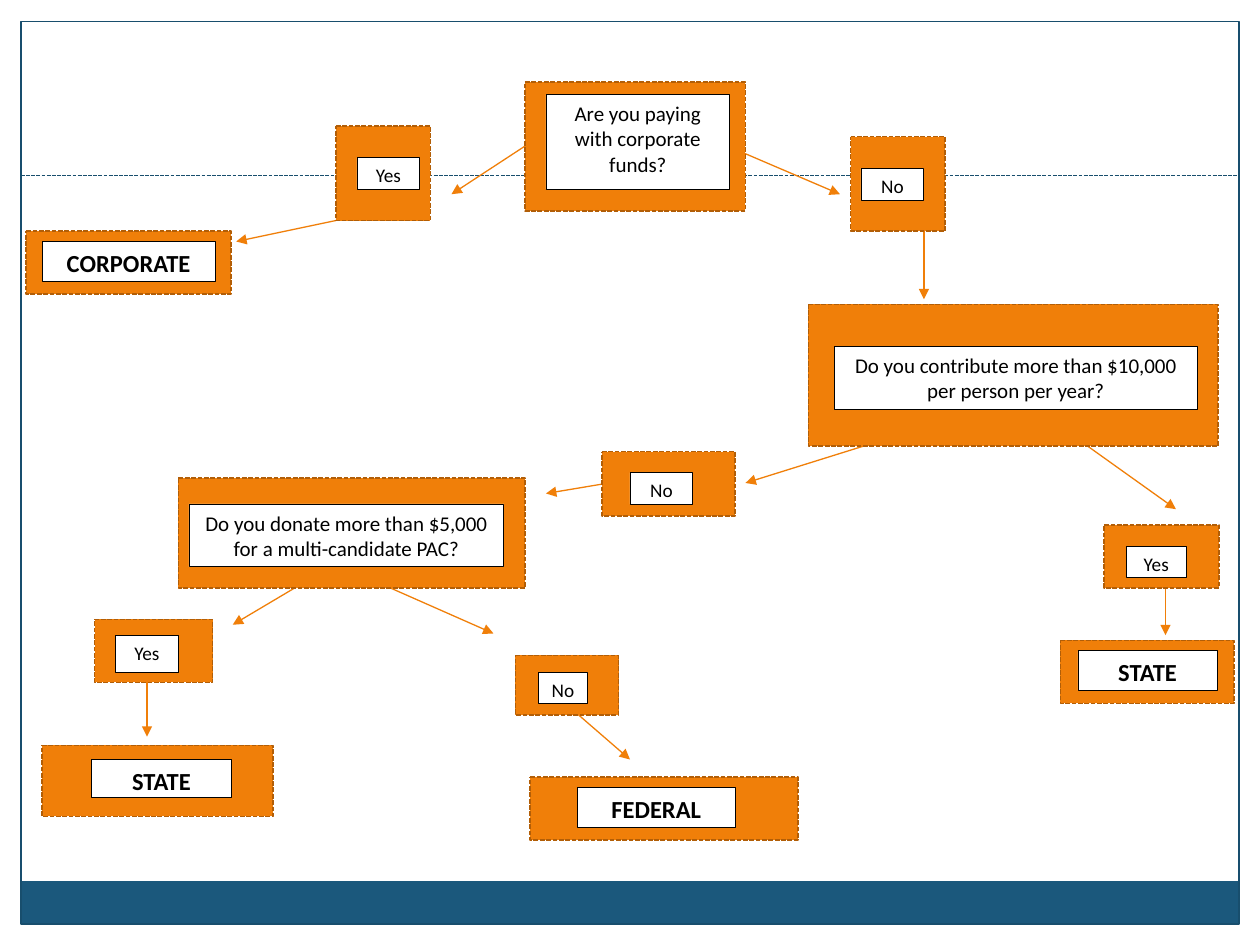
from lxml.etree import SubElement
from pptx import Presentation
from pptx.dml.color import RGBColor
from pptx.enum.dml import MSO_LINE
from pptx.enum.shapes import MSO_CONNECTOR, MSO_SHAPE
from pptx.enum.text import MSO_ANCHOR, PP_ALIGN
from pptx.oxml.ns import qn
from pptx.util import Pt

FONT = "Calibri"
ORANGE, BROWN = "F07F09", "B25E07"
NAVY, BLUE = "184E6D", "1B587C"
WHITE, BLACK = "FFFFFF", "000000"

# Text styles: size in points, bold
QUESTION, ANSWER, RESULT = (12, False), (11, False), (14, True)

# Text, style, outer box, inner label (left, top, width, height)
NODES = [
    ("Are you paying with corporate funds?", QUESTION,
     (300, 47, 126, 73.5), (312, 54, 105, 54)),
    ("Yes", ANSWER, (192, 72, 54, 54), (204, 90, 36, 18)),
    ("No", ANSWER, (486, 78, 54, 54), (492, 96, 36, 18.5)),
    ("CORPORATE", RESULT, (15, 132, 117, 36), (24, 138, 99, 23)),
    ("Do you contribute more than $10,000 per person per year?", QUESTION,
     (462, 174, 234, 81), (477, 198, 207, 36)),
    ("Yes", ANSWER, (631, 300, 65.5, 36), (643.5, 312, 34.5, 18)),
    ("STATE", RESULT, (606, 366, 99, 36), (616, 372, 79.5, 22.5)),
    ("No", ANSWER, (344, 258, 76, 37), (360, 270, 36, 18)),
    ("Do you donate more than $5,000 for a multi-candidate PAC?", QUESTION,
     (102, 273, 198, 63), (108, 288, 180, 36)),
    ("No", ANSWER, (294.5, 374.5, 59, 34), (307.5, 384, 28.5, 18)),
    ("Yes", ANSWER, (54, 354, 67.5, 36), (66, 363, 36, 21)),
    ("STATE", RESULT, (24, 426, 132, 40.5), (52.5, 434, 79.5, 21.5)),
    ("FEDERAL", RESULT, (303, 444, 153, 36), (330, 450, 90, 23)),
]

# Start x, start y, end x, end y
ARROWS = [
    (300, 83.5, 258, 111), (417, 84, 480, 111),
    (192, 126, 135, 138), (528, 126, 528, 171),
    (609, 246, 672, 291), (522, 246, 426, 276),
    (666, 336, 666, 363), (348, 276, 312, 282),
    (178.5, 330, 133, 357), (209.5, 330, 282, 362),
    (84, 390, 84, 421), (330, 408, 360, 434),
]


def color(value):
    return RGBColor.from_string(value)


def style_line(line, value, width, dash=None):
    line.color.rgb = color(value)
    line.width = Pt(width)
    if dash:
        line.dash_style = dash


def add_box(page, place, fill=None, line=None, kind=MSO_SHAPE.RECTANGLE):
    box = page.shapes.add_shape(kind, *map(Pt, place))
    box.shadow.inherit = False
    if fill:
        box.fill.solid()
        box.fill.fore_color.rgb = color(fill)
    else:
        box.fill.background()
    if line:
        style_line(box.line, *line)
    else:
        box.line.fill.background()
    return box


def add_line(page, ends, value, dash=None, arrow=False):
    link = page.shapes.add_connector(MSO_CONNECTOR.STRAIGHT, *map(Pt, ends))
    style_line(link.line, value, 0.75, dash)
    if arrow:
        SubElement(link.line._get_or_add_ln(), qn("a:tailEnd"), type="triangle")
    SubElement(link._element.spPr, qn("a:effectLst"))


def add_node(page, text, style, outer, inner):
    add_box(page, outer, ORANGE, (BROWN, 0.9, MSO_LINE.SQUARE_DOT),
            MSO_SHAPE.FLOWCHART_PROCESS)
    frame = add_box(page, inner, WHITE, (BLACK, 0.5)).text_frame
    frame.text = text
    frame.word_wrap = True
    frame.vertical_anchor = MSO_ANCHOR.TOP
    para = frame.paragraphs[0]
    para.alignment = PP_ALIGN.CENTER
    font = para.runs[0].font
    font.name = FONT
    font.size, font.bold = Pt(style[0]), style[1]
    font.color.rgb = color(BLACK)


def main():
    deck = Presentation()
    deck.slide_width, deck.slide_height = Pt(720), Pt(540)
    page = deck.slides.add_slide(deck.slide_layouts[6])

    # Page frame, footer band and title rule
    add_box(page, (12, 503.5, 695.5, 24.5), BLUE)
    add_box(page, (12, 12.5, 696, 515.5), line=(NAVY, 0.75))
    add_line(page, (12, 100.5, 708, 100.5), NAVY, MSO_LINE.SQUARE_DOT)

    # Decision tree
    for ends in ARROWS:
        add_line(page, ends, ORANGE, arrow=True)
    for node in NODES:
        add_node(page, *node)

    deck.save("out.pptx")


if __name__ == "__main__":
    main()
